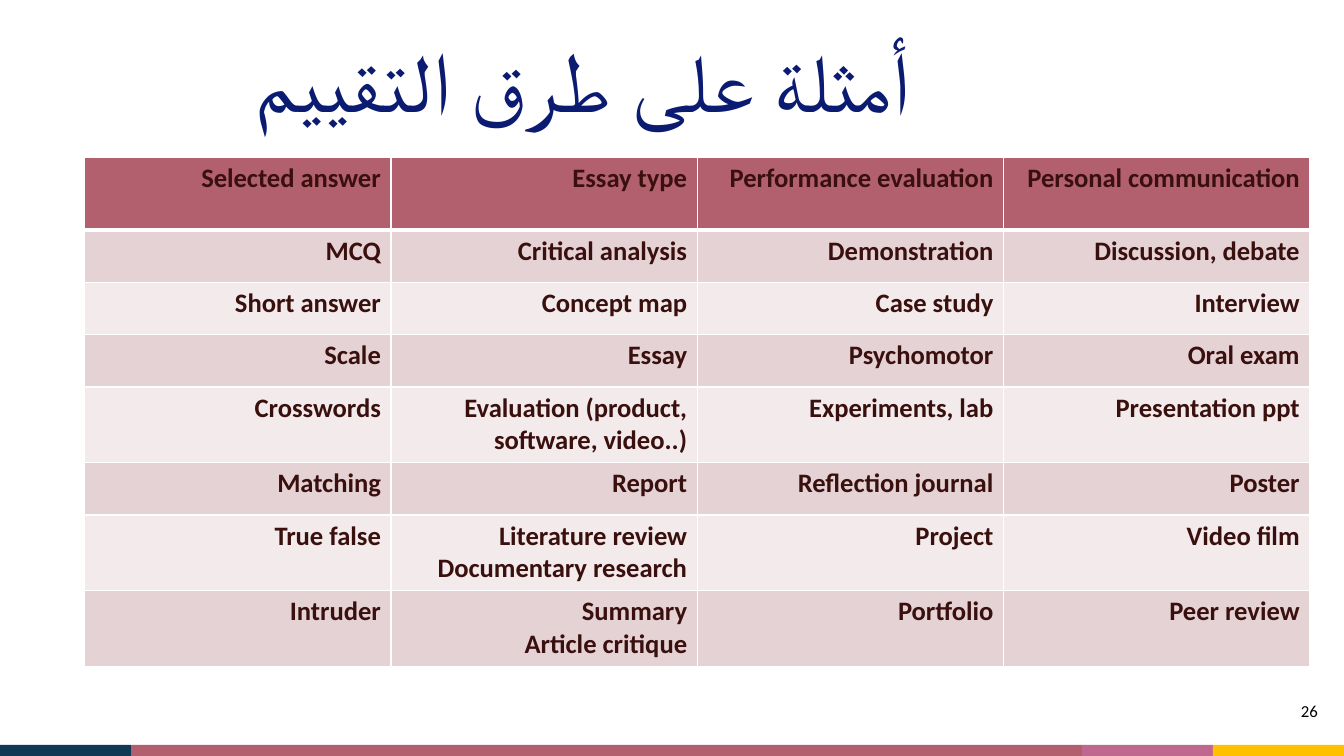
import dataclasses

import lxml.etree
import pptx
import pptx.dml.color
import pptx.enum.shapes
import pptx.enum.text
import pptx.oxml.ns
import pptx.util

Inches = pptx.util.Inches
Pt = pptx.util.Pt
ALIGN = pptx.enum.text.PP_ALIGN
qualify = pptx.oxml.ns.qn

ROSE = "B2606E"
WHITE = "FFFFFF"
BAND_COLOURS = ("F2EAEB", "E4D2D5")


@dataclasses.dataclass(frozen=True)
class FooterBar:
    left: float
    width: float
    colour: str


@dataclasses.dataclass(frozen=True)
class TextStyle:
    font: str
    size: float
    colour: str
    align: pptx.enum.text.PP_ALIGN
    bold: bool = False


@dataclasses.dataclass(frozen=True)
class MethodRow:
    height: float
    entries: tuple[str, ...]


FOOTER_BARS = (
    FooterBar(10.73, 1.3, "BF678E"),
    FooterBar(12.03, 1.3, "FFC000"),
    FooterBar(0, 1.3, "0F3955"),
    FooterBar(1.3, 9.43, ROSE),
)

TITLE_STYLE = TextStyle("Lato", 60, "0A1B71", ALIGN.CENTER)
NUMBER_STYLE = TextStyle("Calibri", 12, "000000", ALIGN.RIGHT)
CELL_STYLE = TextStyle("Calibri", 19, "3A100E", ALIGN.RIGHT, bold=True)

METHOD_ROWS = (
    MethodRow(0.72, ("Selected answer", "Essay type", "Performance evaluation", "Personal communication")),
    MethodRow(0.52, ("MCQ", "Critical analysis", "Demonstration", "Discussion, debate")),
    MethodRow(0.52, ("Short answer", "Concept map", "Case study", "Interview")),
    MethodRow(0.52, ("Scale", "Essay", "Psychomotor", "Oral exam")),
    MethodRow(0.75, ("Crosswords", "Evaluation (product, software, video..)", "Experiments, lab", "Presentation ppt")),
    MethodRow(0.52, ("Matching", "Report", "Reflection journal", "Poster")),
    MethodRow(0.75, ("True false", "Literature review\nDocumentary research", "Project", "Video film")),
    MethodRow(0.75, ("Intruder", "Summary\nArticle critique", "Portfolio", "Peer review")),
)


def colour(value: str) -> pptx.dml.color.RGBColor:
    return pptx.dml.color.RGBColor.from_string(value)


def write_text(frame, text: str, style: TextStyle) -> None:
    for index, line in enumerate(text.split("\n")):
        para = frame.paragraphs[0] if index == 0 else frame.add_paragraph()
        para.alignment = style.align
        span = para.add_run()
        span.text = line
        span.font.name = style.font
        span.font.size = Pt(style.size)
        span.font.bold = style.bold
        span.font.color.rgb = colour(style.colour)


def set_insets(frame, inset: float) -> None:
    frame.margin_left = frame.margin_right = Inches(inset)
    frame.margin_top = frame.margin_bottom = Inches(inset)


def draw_footer_bar(page, bar: FooterBar) -> None:
    box = page.shapes.add_shape(
        pptx.enum.shapes.MSO_SHAPE.RECTANGLE,
        Inches(bar.left), Inches(7.39), Inches(bar.width), Inches(0.11),
    )
    box.shadow.inherit = False
    box.fill.solid()
    box.fill.fore_color.rgb = colour(bar.colour)
    box.line.fill.background()


def draw_title(page, text: str) -> None:
    title = page.shapes.title
    title.left, title.top = Inches(0.63), Inches(0.15)
    title.width, title.height = Inches(10.28), Inches(1.25)
    frame = title.text_frame
    set_insets(frame, 0.1)
    frame.word_wrap = True
    frame.auto_size = pptx.enum.text.MSO_AUTO_SIZE.NONE
    frame.vertical_anchor = pptx.enum.text.MSO_ANCHOR.BOTTOM
    write_text(frame, text, TITLE_STYLE)
    para = frame.paragraphs[0]
    para.line_spacing = 0.9
    para._p.get_or_add_pPr().set("rtl", "1")
    properties = para.runs[0].font._element
    lxml.etree.SubElement(properties, qualify("a:cs"), typeface=TITLE_STYLE.font)


def draw_page_number(page, text: str) -> None:
    box = page.shapes.add_textbox(Inches(12.37), Inches(6.85), Inches(0.8), Inches(0.46))
    set_insets(box.text_frame, 0.1)
    box.text_frame.word_wrap = True
    write_text(box.text_frame, text, NUMBER_STYLE)


def set_border(cell, side: str, points: float) -> None:
    properties = cell._tc.get_or_add_tcPr()
    line = lxml.etree.SubElement(properties, qualify(f"a:{side}"), w=str(Pt(points)))
    fill = lxml.etree.SubElement(line, qualify("a:solidFill"))
    lxml.etree.SubElement(fill, qualify("a:srgbClr"), val=WHITE)


def draw_methods_table(page, rows: tuple[MethodRow, ...]) -> None:
    table = page.shapes.add_table(
        len(rows), len(rows[0].entries),
        Inches(0.84), Inches(1.56), Inches(12.15), Inches(sum(row.height for row in rows)),
    ).table
    for row_index, row in enumerate(rows):
        table.rows[row_index].height = Inches(row.height)
        top_width = 3 if row_index == 1 else 1
        bottom_width = 3 if row_index == 0 else 1
        for column_index, entry in enumerate(row.entries):
            cell = table.cell(row_index, column_index)
            cell.margin_left = cell.margin_right = Inches(0.1)
            cell.margin_top = cell.margin_bottom = Inches(0.05)
            write_text(cell.text_frame, entry, CELL_STYLE)
            for side, points in (("lnL", 1), ("lnR", 1), ("lnT", top_width), ("lnB", bottom_width)):
                set_border(cell, side, points)
            cell.fill.solid()
            cell.fill.fore_color.rgb = colour(BAND_COLOURS[row_index % 2] if row_index else ROSE)


def main() -> None:
    deck = pptx.Presentation()
    deck.slide_width, deck.slide_height = Inches(13.33), Inches(7.5)
    page = deck.slides.add_slide(deck.slide_layouts.get_by_name("Title Only"))
    for bar in FOOTER_BARS:
        draw_footer_bar(page, bar)
    draw_title(page, "أمثلة على طرق التقييم")
    draw_page_number(page, "26")
    draw_methods_table(page, METHOD_ROWS)
    deck.save("out.pptx")


if __name__ == "__main__":
    main()
